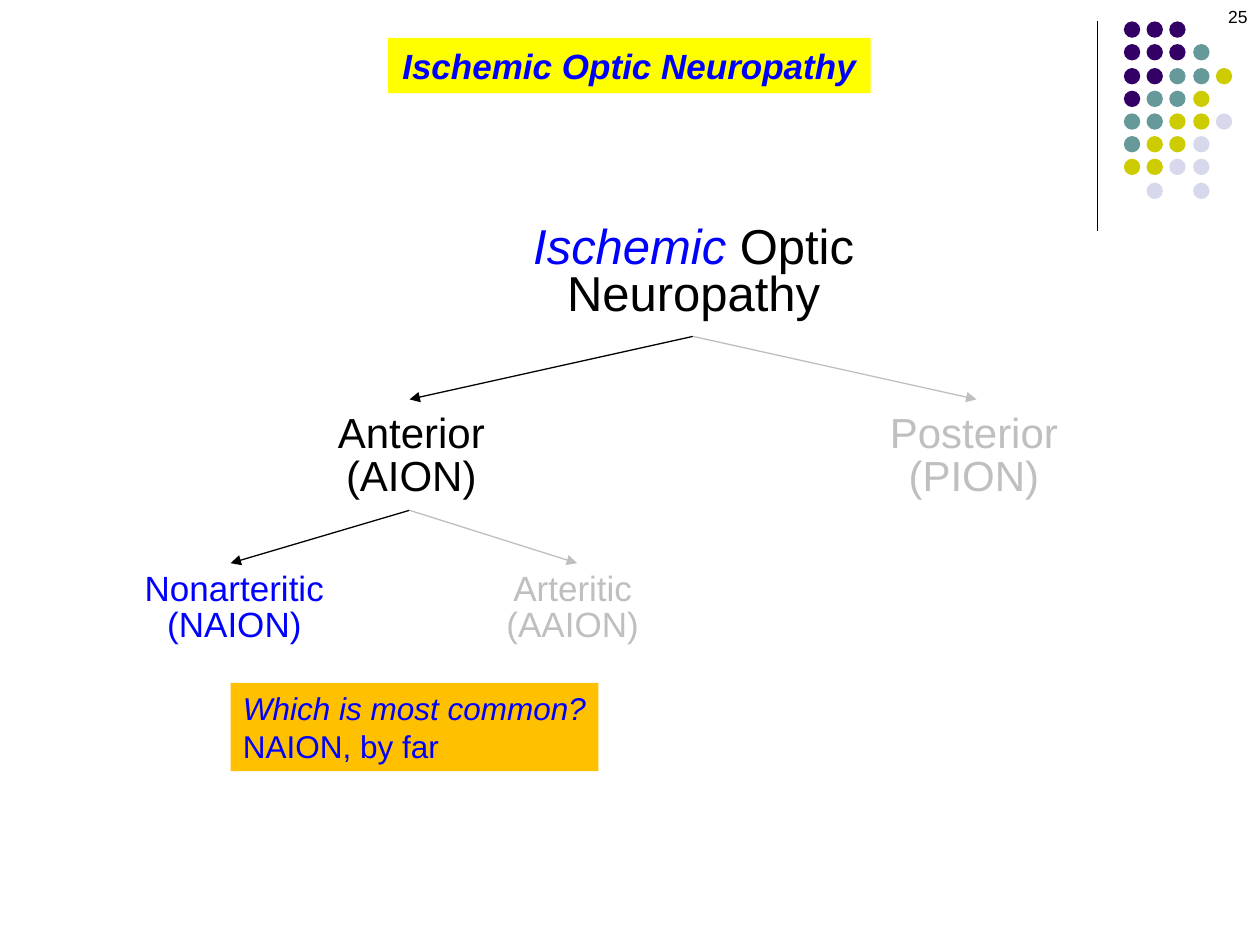
from dataclasses import dataclass

from lxml import etree
from pptx import Presentation
from pptx.dml.color import RGBColor
from pptx.enum.shapes import MSO_CONNECTOR, MSO_SHAPE
from pptx.enum.text import MSO_ANCHOR, MSO_AUTO_SIZE, PP_ALIGN
from pptx.oxml.ns import qn
from pptx.util import Pt

STRAIGHT = MSO_CONNECTOR.STRAIGHT
OVAL, RECT = MSO_SHAPE.OVAL, MSO_SHAPE.RECTANGLE
LEFT, CENTER, RIGHT = PP_ALIGN.LEFT, PP_ALIGN.CENTER, PP_ALIGN.RIGHT
TOP, FIXED_SIZE = MSO_ANCHOR.TOP, MSO_AUTO_SIZE.NONE
TITLE_ONLY = 5
EMU_PER_PX = 9144  # 100 px to the inch


@dataclass(frozen=True)
class Theme:
    font: str = "Arial"
    ink: str = "000000"
    muted: str = "BFBFBF"
    accent: str = "0000FF"
    title_fill: str = "FFFF00"
    answer_fill: str = "FFC000"
    purple: str = "330066"
    teal: str = "669999"
    olive: str = "CCCC00"
    lavender: str = "D8D8EC"
    root: int = 28
    branch: int = 24
    leaf: int = 20
    answer: int = 18
    number: int = 10
    line: float = 0.75


def px(*lengths):
    return [length * EMU_PER_PX for length in lengths]


class SlideBuilder:
    def __init__(self, slide, theme):
        self.slide = slide
        self.theme = theme

    def set_text(self, shape, lines, size, align=CENTER, spacing=1.0, wrap=False):
        """Fill a shape with lines, each a list of (text, colour, font options)."""
        frame = shape.text_frame
        frame.word_wrap = wrap
        frame.auto_size = FIXED_SIZE
        frame.vertical_anchor = TOP
        for index, line in enumerate(lines):
            paragraph = frame.add_paragraph() if index else frame.paragraphs[0]
            paragraph.alignment = align
            paragraph.line_spacing = spacing
            for text, color, options in line:
                run = paragraph.add_run()
                run.text = text
                run.font.name = self.theme.font
                run.font.size = Pt(size)
                run.font.color.rgb = RGBColor.from_string(color)
                run.font.bold = "b" in options
                run.font.italic = "i" in options

    def paint(self, shape, color):
        shape.fill.solid()
        shape.fill.fore_color.rgb = RGBColor.from_string(color)

    def title(self, box, lines, size, fill):
        title = self.slide.shapes.title
        title.left, title.top, title.width, title.height = px(*box)
        self.paint(title, fill)
        self.set_text(title, lines, size)

    def label(self, box, lines, size, **layout):
        self.set_text(self.slide.shapes.add_textbox(*px(*box)), lines, size, **layout)

    def shape(self, kind, box, fill, parent=None):
        shape = (parent or self.slide).shapes.add_shape(kind, *px(*box))
        shape.shadow.inherit = False
        shape.line.fill.background()
        self.paint(shape, fill)
        return shape

    def panel(self, box, lines, size, fill):
        self.set_text(self.shape(RECT, box, fill), lines, size, align=LEFT)

    def line(self, start, end, color, arrow=False):
        line = self.slide.shapes.add_connector(STRAIGHT, *px(*start, *end))
        line.line.color.rgb = RGBColor.from_string(color)
        line.line.width = Pt(self.theme.line)
        properties = line._element.spPr
        if arrow:
            outline = properties.find(qn("a:ln"))
            etree.SubElement(outline, qn("a:tailEnd"), type="triangle")
        etree.SubElement(properties, qn("a:effectLst"))

    def dots(self, left, top, pitch, size, rows, colors):
        """Draw one dot per letter of each row; a full stop leaves a gap."""
        group = self.slide.shapes.add_group_shape()
        for row, letters in enumerate(rows):
            for column, letter in enumerate(letters):
                if letter in colors:
                    box = (round(left + column * pitch), round(top + row * pitch),
                           size, size)
                    self.shape(OVAL, box, colors[letter], group)


def main():
    theme = Theme()
    deck = Presentation()
    deck.slide_width, deck.slide_height = px(1000, 750)
    slide = deck.slides.add_slide(deck.slide_layouts[TITLE_ONLY])
    builder = SlideBuilder(slide, theme)

    builder.line((871, 17), (871, 183), theme.ink)
    builder.dots(
        892, 17, 18.25, 13,
        ("PPP", "PPPT", "PPTTO", "PTTO", "TTOOL", "TOOL", "OOLL", ".L.L"),
        {"P": theme.purple, "T": theme.teal, "O": theme.olive, "L": theme.lavender},
    )

    builder.label(
        (413, 175, 275, 85),
        [[("Ischemic", theme.accent, "i"), (" Optic", theme.ink, "")],
         [("Neuropathy", theme.ink, "")]],
        theme.root, spacing=0.8,
    )
    for box, name, acronym, size, color in (
        ((258, 324, 137, 78), "Anterior", "(AION)", theme.branch, theme.ink),
        ((696, 324, 154, 78), "Posterior", "(PION)", theme.branch, theme.muted),
        ((105, 450, 162, 67), "Nonarteritic", "(NAION)", theme.leaf, theme.accent),
        ((392, 450, 125, 67), "Arteritic", "(AAION)", theme.leaf, theme.muted),
    ):
        lines = [[(name, color, "")], [(acronym, color, "")]]
        builder.label(box, lines, size, spacing=0.85)

    root_fork, anterior_fork = (550, 267), (325, 405)
    for start, end, color in (
        (root_fork, (325, 317), theme.ink),
        (anterior_fork, (183, 447), theme.ink),
        (anterior_fork, (458, 447), theme.muted),
        (root_fork, (775, 317), theme.muted),
    ):
        builder.line(start, end, color, arrow=True)

    builder.panel(
        (183, 542, 292, 70),
        [[("Which is most common?", theme.accent, "i")],
         [("NAION, by far", theme.accent, "")]],
        theme.answer, theme.answer_fill,
    )
    builder.label((767, 0, 233, 50), [[("25", theme.ink, "")]],
                  theme.number, align=RIGHT, wrap=True)
    builder.title((308, 30, 383, 44),
                  [[("Ischemic Optic Neuropathy", theme.accent, "bi")]],
                  theme.leaf, theme.title_fill)
    deck.save("out.pptx")


if __name__ == "__main__":
    main()
